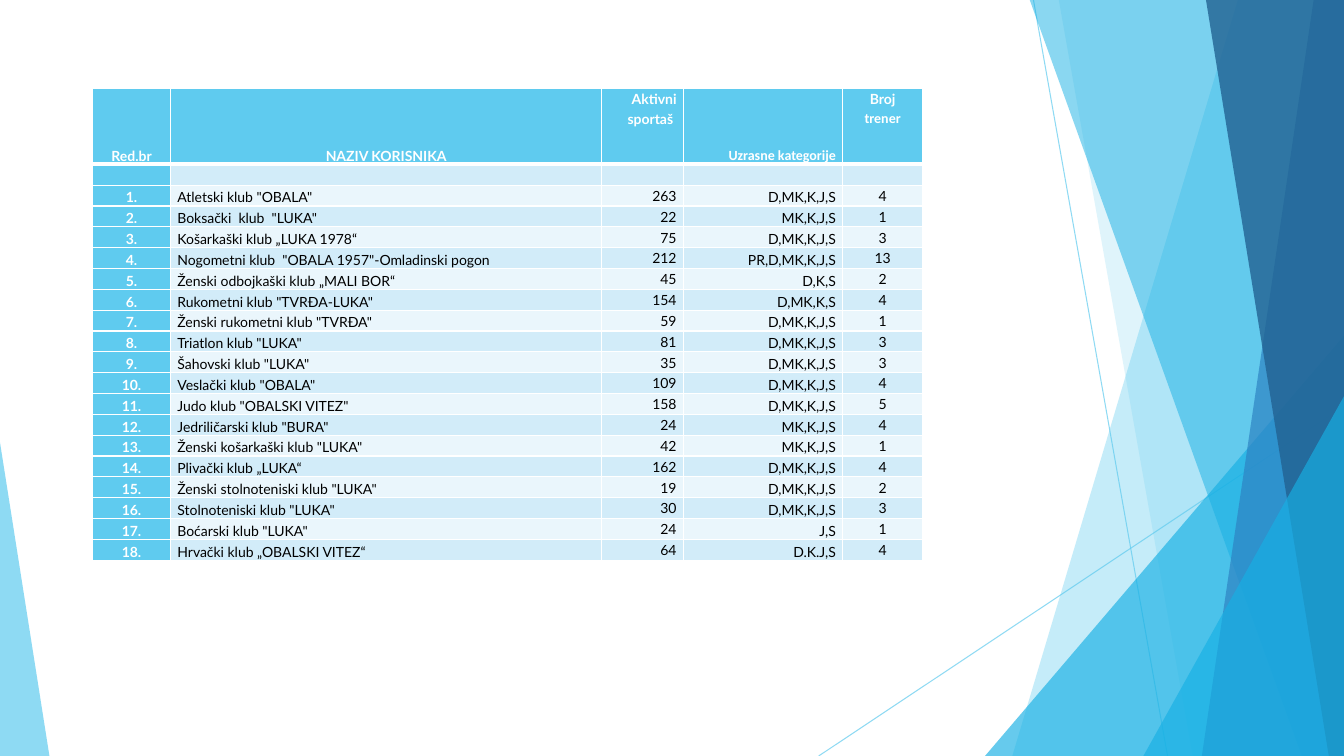
from dataclasses import dataclass

from lxml.etree import SubElement
from pptx import Presentation
from pptx.dml.color import RGBColor
from pptx.enum.shapes import MSO_CONNECTOR, MSO_SHAPE
from pptx.enum.text import MSO_ANCHOR, PP_ALIGN
from pptx.oxml.ns import qn
from pptx.util import Inches, Pt

SKY, AZURE, BLUE, NAVY = "5FCBEF", "17B0E4", "2E83C3", "226292"
WHITE, BLACK = "FFFFFF", "000000"
BANDS = ("EAF6FC", "D2ECF9")
TOP, BOTTOM, RIGHT = -0.01, 7.5, 13.33


@dataclass
class Line:
    start: tuple[float, float]
    end: tuple[float, float]


@dataclass
class Panel:
    """Band running to the right edge, given by the left ends of its top and bottom."""
    top_x: float
    bottom_x: float
    color: str
    alpha: int


@dataclass
class Triangle:
    left: float
    top: float
    width: float
    apex: float
    color: str
    alpha: int


@dataclass
class Column:
    heading: str
    width: float
    align: PP_ALIGN
    anchor: MSO_ANCHOR
    heading_align: PP_ALIGN
    heading_fonts: tuple[str, ...] = ("Lato",)


LINES = [Line((10.25, 0), (11.58, 7.5)), Line((13.33, 4.03), (8.12, 7.5))]

# Right-hand decoration, back to front, then the left corner
DECOR = [
    Panel(12.28, 10.04, SKY, 36),
    Panel(10.5, 11.83, SKY, 20),
    Triangle(9.77, 3.33, 3.56, 1, AZURE, 66),
    Panel(10.21, 12.91, AZURE, 50),
    Panel(13.03, 11.92, BLUE, 70),
    Panel(11.96, 13.18, NAVY, 80),
    Triangle(11.34, 3.93, 1.99, 1, AZURE, 66),
    Triangle(0, 4.39, 0.49, 0, SKY, 70),
]

LEFT, CENTER, RIGHT_ALIGN = PP_ALIGN.LEFT, PP_ALIGN.CENTER, PP_ALIGN.RIGHT
UPPER, LOWER = MSO_ANCHOR.TOP, MSO_ANCHOR.BOTTOM
COLUMNS = [
    Column("Red.br", 0.77, CENTER, LOWER, CENTER),
    Column("NAZIV KORISNIKA", 4.28, LEFT, LOWER, CENTER),
    Column("Aktivni\nsportaš ", 0.81, RIGHT_ALIGN, UPPER, RIGHT_ALIGN, ("Lato", "Lato")),
    Column("Uzrasne kategorije", 1.58, RIGHT_ALIGN, LOWER, RIGHT_ALIGN, ("Calibri",)),
    Column("Broj\ntrener", 0.79, CENTER, UPPER, CENTER, ("Lato", "Calibri")),
]
HEADER_HEIGHT, TABLE_HEIGHT = 0.75, 4.68

# Club, active athletes, age categories, coaches
CLUBS = [
    ('Atletski klub "OBALA"', 263, "D,MK,K,J,S", 4),
    ('Boksački  klub  "LUKA"', 22, "MK,K,J,S", 1),
    ("Košarkaški klub „LUKA 1978“", 75, "D,MK,K,J,S", 3),
    ('Nogometni klub  "OBALA 1957"-Omladinski pogon', 212, "PR,D,MK,K,J,S", 13),
    ("Ženski odbojkaški klub „MALI BOR“", 45, "D,K,S", 2),
    ('Rukometni klub "TVRĐA-LUKA"', 154, "D,MK,K,S", 4),
    ('Ženski rukometni klub "TVRĐA"', 59, "D,MK,K,J,S", 1),
    ('Triatlon klub "LUKA"', 81, "D,MK,K,J,S", 3),
    ('Šahovski klub "LUKA"', 35, "D,MK,K,J,S", 3),
    ('Veslački klub "OBALA"', 109, "D,MK,K,J,S", 4),
    ('Judo klub "OBALSKI VITEZ"', 158, "D,MK,K,J,S", 5),
    ('Jedriličarski klub "BURA"', 24, "MK,K,J,S", 4),
    ('Ženski košarkaški klub "LUKA"', 42, "MK,K,J,S", 1),
    ("Plivački klub „LUKA“", 162, "D,MK,K,J,S", 4),
    ('Ženski stolnoteniski klub "LUKA"', 19, "D,MK,K,J,S", 2),
    ('Stolnoteniski klub "LUKA"', 30, "D,MK,K,J,S", 3),
    ('Boćarski klub "LUKA"', 24, "J,S", 1),
    ("Hrvački klub „OBALSKI VITEZ“", 64, "D.K.J,S", 4),
]


def rgb(color: str) -> RGBColor:
    return RGBColor.from_string(color)


def set_alpha(fill_parent, percent: int) -> None:
    clr = fill_parent.find(f"{qn('a:solidFill')}/{qn('a:srgbClr')}")
    SubElement(clr, qn("a:alpha"), val=str(percent * 1000))


def add_line(s, line: Line) -> None:
    cx = s.shapes.add_connector(
        MSO_CONNECTOR.STRAIGHT, *(Inches(v) for v in line.start + line.end))
    cx.line.color.rgb = rgb(SKY)
    cx.line.width = Pt(0.75)
    sp_pr = cx._element.spPr
    set_alpha(sp_pr.find(qn("a:ln")), 70)
    SubElement(sp_pr, qn("a:effectLst"))


def add_decor(s, item: Panel | Triangle) -> None:
    if isinstance(item, Panel):
        corners = [(item.top_x, TOP), (RIGHT, TOP), (RIGHT, BOTTOM), (item.bottom_x, BOTTOM)]
        points = [(Inches(x), Inches(y)) for x, y in corners]
        builder = s.shapes.build_freeform(*points[0])
        builder.add_line_segments(points[1:], close=True)
        sp = builder.convert_to_shape()
    else:
        sp = s.shapes.add_shape(
            MSO_SHAPE.ISOSCELES_TRIANGLE, Inches(item.left), Inches(item.top),
            Inches(item.width), Inches(BOTTOM - item.top))
        sp.adjustments[0] = item.apex
    sp.shadow.inherit = False
    sp.line.fill.background()
    sp.fill.solid()
    sp.fill.fore_color.rgb = rgb(item.color)
    set_alpha(sp._element.spPr, item.alpha)


def set_borders(cell, top: float, bottom: float) -> None:
    tc_pr = cell._tc.get_or_add_tcPr()
    for side, width in (("L", 1), ("R", 1), ("T", top), ("B", bottom)):
        ln = SubElement(tc_pr, qn(f"a:ln{side}"), w=str(Pt(width)))
        SubElement(SubElement(ln, qn("a:solidFill")), qn("a:srgbClr"), val=WHITE)


def fill_cell(cell, text: str, row: int, col: int) -> None:
    column = COLUMNS[col]
    header = row == 0
    accent = header or col == 0
    fonts = column.heading_fonts if header else ("Lato",)
    set_borders(cell, 3 if row == 1 else 1, 3 if header else 1)
    cell.fill.solid()
    cell.fill.fore_color.rgb = rgb(SKY if accent else BANDS[row % 2])
    cell.margin_left = cell.margin_right = Inches(0.07)
    cell.margin_top = cell.margin_bottom = 0
    cell.vertical_anchor = column.anchor
    cell.text_frame.text = text
    for p, font in zip(cell.text_frame.paragraphs, fonts):
        p.alignment = column.heading_align if header else column.align
        p.line_spacing = 1.15
        for r in p.runs:
            r.font.name = font
            r.font.size = Pt(10)
            r.font.bold = accent
            r.font.color.rgb = rgb(WHITE if accent else BLACK)
        if not p.runs:
            SubElement(p._p, qn("a:endParaRPr"), sz="1000")


def add_club_table(s) -> None:
    rows = [[c.heading for c in COLUMNS], [""] * len(COLUMNS)]
    rows += [[f"{i}.", *map(str, club)] for i, club in enumerate(CLUBS, 1)]
    table = s.shapes.add_table(
        len(rows), len(COLUMNS), Inches(0.92), Inches(0.88),
        Inches(8.23), Inches(TABLE_HEIGHT)).table
    for table_col, column in zip(table.columns, COLUMNS):
        table_col.width = Inches(column.width)
    row_height = (TABLE_HEIGHT - HEADER_HEIGHT) / (len(rows) - 1)
    for i, texts in enumerate(rows):
        table.rows[i].height = Inches(row_height if i else HEADER_HEIGHT)
        for j, text in enumerate(texts):
            fill_cell(table.cell(i, j), text, i, j)


def main() -> None:
    prs = Presentation()
    prs.slide_width, prs.slide_height = Inches(13.33), Inches(7.5)
    s = prs.slides.add_slide(prs.slide_layouts[6])
    # Background decoration
    for line in LINES:
        add_line(s, line)
    for item in DECOR:
        add_decor(s, item)
    # Clubs
    add_club_table(s)
    prs.save("out.pptx")


if __name__ == "__main__":
    main()
